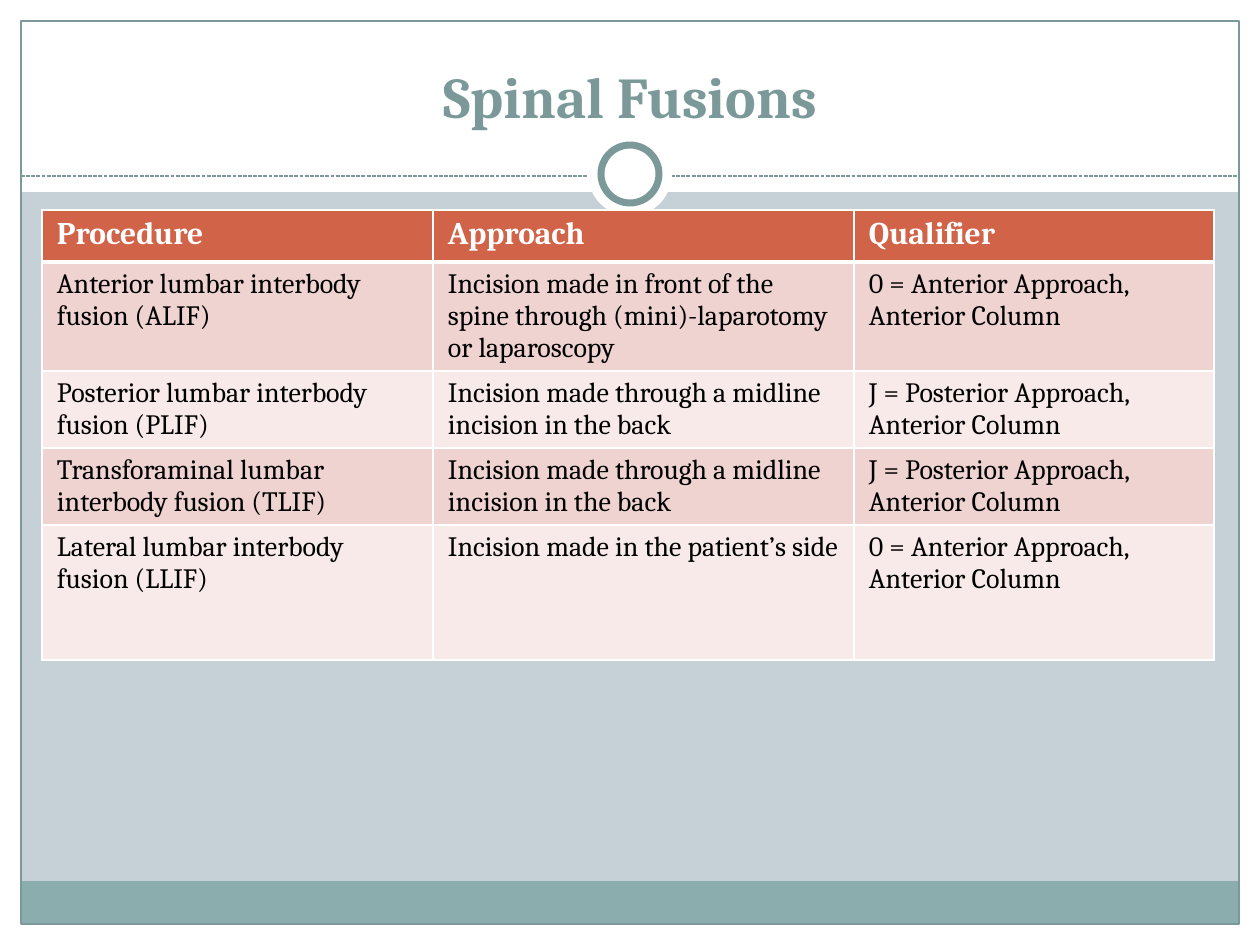
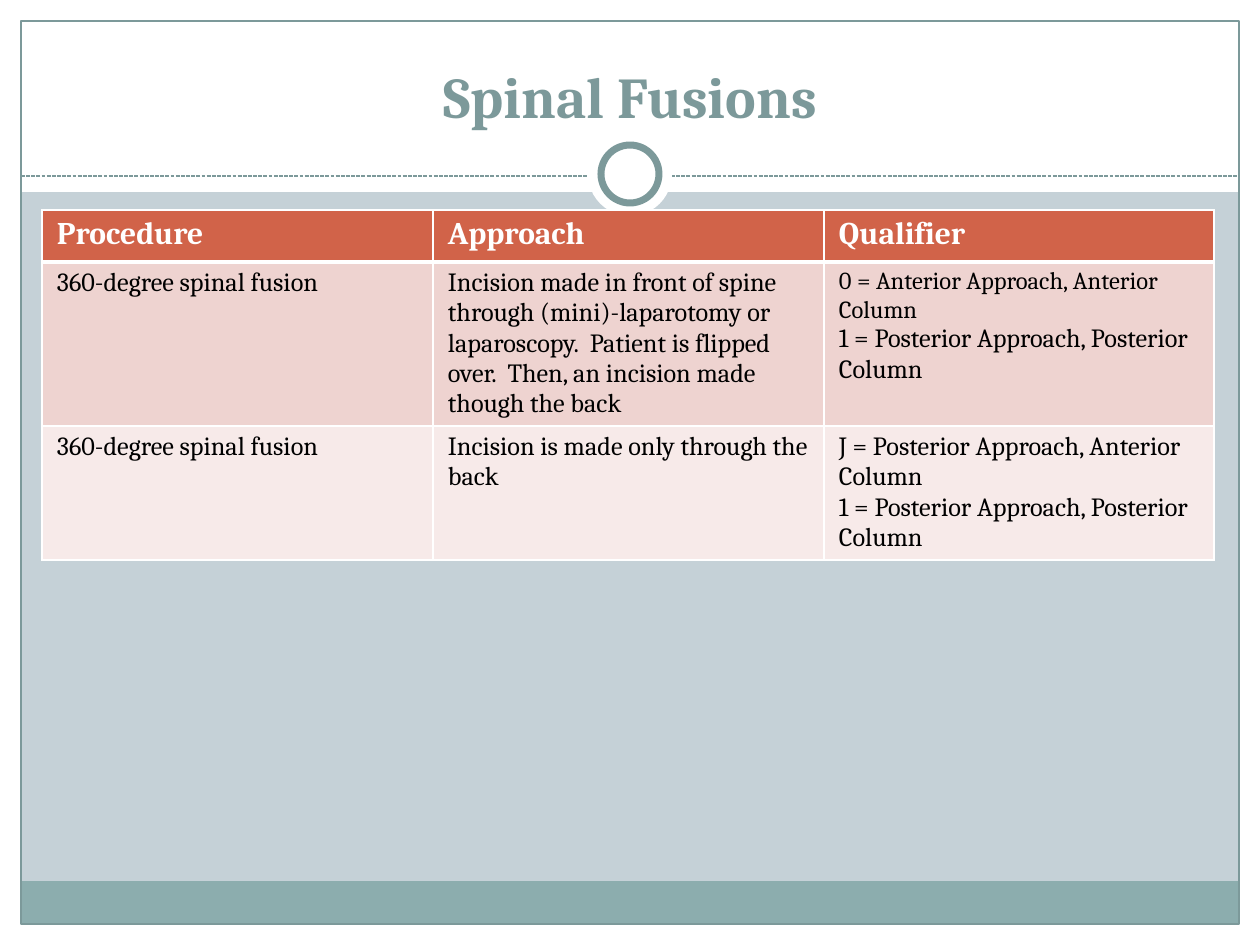
from lxml.etree import SubElement
from pptx import Presentation
from pptx.dml.color import RGBColor
from pptx.enum.dml import MSO_LINE
from pptx.enum.shapes import MSO_CONNECTOR, MSO_SHAPE
from pptx.enum.text import MSO_ANCHOR, MSO_AUTO_SIZE, PP_ALIGN
from pptx.oxml.ns import qn
from pptx.util import Pt

EMU_PER_PX = 914400 / 126
SLIDE_WIDTH, SLIDE_HEIGHT = 1260, 945
MARGIN = 21
TOP_BAND_HEIGHT = 192
TITLE_BOX = (42, 32, 1176, 104)
TABLE_ORIGIN = (42, 210)
FONT = "Cambria"
COLORS = {
    "background": "C5D1D7",
    "white": "FFFFFF",
    "black": "000000",
    "teal": "7C999A",
    "footer": "8CADAE",
    "header": "D16349",
    "odd_row": "EED3D0",
    "even_row": "F7EAE9",
}

HEADINGS = ("Procedure", "Approach", "Qualifier")
ANTERIOR = "0 = Anterior Approach, Anterior Column"
POSTERIOR = "J = Posterior Approach, Anterior Column"
POSTERIOR_COLUMN = "1 = Posterior Approach, Posterior Column"
MIDLINE = "Incision made through a midline incision in the back"
INTERBODY_FUSIONS = [
    ("Anterior lumbar interbody fusion (ALIF)",
     "Incision made in front of the spine through (mini)-laparotomy or laparoscopy",
     ANTERIOR),
    ("Posterior lumbar interbody fusion (PLIF)", MIDLINE, POSTERIOR),
    ("Transforaminal lumbar interbody fusion (TLIF)", MIDLINE, POSTERIOR),
    ("Lateral lumbar interbody fusion (LLIF)",
     "Incision made in the patient’s side", ANTERIOR),
]
FULL_CIRCLE_FUSIONS = [
    ("360-degree spinal fusion",
     "Incision made in front of spine through (mini)-laparotomy or laparoscopy.  "
     "Patient is flipped over.  Then, an incision made though the back",
     f"{ANTERIOR}\n{POSTERIOR_COLUMN}"),
    ("360-degree spinal fusion", "Incision is made only through the back",
     f"{POSTERIOR}\n{POSTERIOR_COLUMN}"),
]


def px(length):
    return round(length * EMU_PER_PX)


def color(name):
    return RGBColor.from_string(COLORS[name])


def write_text(text_frame, text, size, color_name, bold=False, align=PP_ALIGN.LEFT):
    """Write one paragraph per line of text."""
    text_frame.text = text
    text_frame.word_wrap = True
    for paragraph in text_frame.paragraphs:
        paragraph.alignment = align
        font = paragraph.runs[0].font
        font.name, font.size, font.bold = FONT, Pt(size), bold
        font.color.rgb = color(color_name)


def add_plain_shape(slide, kind, box, fill=None, line=None, line_width=0.75):
    shape = slide.shapes.add_shape(kind, *map(px, box))
    shape.shadow.inherit = False
    if fill:
        shape.fill.solid()
        shape.fill.fore_color.rgb = color(fill)
    else:
        shape.fill.background()
    if line:
        shape.line.color.rgb = color(line)
        shape.line.width = Pt(line_width)
    else:
        shape.line.fill.background()
    return shape


def add_dashed_rule(slide, left, right, y):
    rule = slide.shapes.add_connector(
        MSO_CONNECTOR.STRAIGHT, px(left), px(y), px(right), px(y))
    rule.line.color.rgb = color("teal")
    rule.line.width = Pt(0.75)
    rule.line.dash_style = MSO_LINE.SQUARE_DOT
    SubElement(rule._element.spPr, qn("a:effectLst"))
    return rule


def add_ring(slide, center_x, center_y):
    parts = []
    for diameter, outline in ((84, None), (58, "teal")):
        box = (center_x - diameter // 2, center_y - diameter // 2, diameter, diameter)
        parts.append(add_plain_shape(slide, MSO_SHAPE.OVAL, box, "white", outline, 4))
    return parts


def add_frame(slide):
    """Draw the bands, border, rule and ring, and return them back to front."""
    right, bottom = SLIDE_WIDTH - MARGIN, SLIDE_HEIGHT - MARGIN
    inner_width = right - MARGIN
    footer_height = 43
    bands = [
        ((0, bottom, SLIDE_WIDTH, MARGIN), "white"),
        ((0, 0, SLIDE_WIDTH, TOP_BAND_HEIGHT), "white"),
        ((0, 0, MARGIN, SLIDE_HEIGHT), "white"),
        ((right, 0, MARGIN, SLIDE_HEIGHT), "white"),
        ((MARGIN, bottom - footer_height, inner_width, footer_height), "footer"),
    ]
    parts = [add_plain_shape(slide, MSO_SHAPE.RECTANGLE, box, fill) for box, fill in bands]
    border_box = (MARGIN, MARGIN, inner_width, bottom - MARGIN)
    parts.append(add_plain_shape(slide, MSO_SHAPE.RECTANGLE, border_box, line="teal"))
    parts.append(add_dashed_rule(slide, MARGIN, right, 176))
    return parts + add_ring(slide, SLIDE_WIDTH // 2, 174)


def share_frame(slide, layout):
    """Draw the frame once and move it to the layout, behind its title."""
    layout.background.fill.solid()
    layout.background.fill.fore_color.rgb = color("background")
    layout_tree = layout.shapes.element
    for placeholder in list(layout.placeholders):
        if placeholder.placeholder_format.idx != 0:
            layout_tree.remove(placeholder._element)
    for position, part in enumerate(add_frame(slide), start=2):
        layout_tree.insert(position, part._element)


def set_title(slide, text):
    title = slide.shapes.title
    title.left, title.top, title.width, title.height = map(px, TITLE_BOX)
    write_text(title.text_frame, text, size=33, color_name="teal", bold=True,
               align=PP_ALIGN.CENTER)
    title.text_frame.vertical_anchor = MSO_ANCHOR.BOTTOM
    title.text_frame.auto_size = MSO_AUTO_SIZE.NONE


def set_borders(cell, top, bottom):
    """Give the cell white borders, with top and bottom widths in points."""
    properties = cell._tc.get_or_add_tcPr()
    for side, width in (("L", 1), ("R", 1), ("T", top), ("B", bottom)):
        line = SubElement(properties, qn(f"a:ln{side}"), w=str(Pt(width)))
        fill = SubElement(line, qn("a:solidFill"))
        SubElement(fill, qn("a:srgbClr"), val=COLORS["white"])


def add_fusion_table(slide, origin, column_widths, row_heights, records, body_size):
    rows = [HEADINGS, *records]
    table = slide.shapes.add_table(
        len(rows), len(HEADINGS), *map(px, origin),
        px(sum(column_widths)), px(sum(row_heights))).table
    for column, width in zip(table.columns, column_widths):
        column.width = px(width)
    for row_index, (row, height) in enumerate(zip(rows, row_heights)):
        table.rows[row_index].height = px(height)
        is_header = row_index == 0
        fill = "header" if is_header else "odd_row" if row_index % 2 else "even_row"
        for column_index, text in enumerate(row):
            cell = table.cell(row_index, column_index)
            set_borders(cell, top=3 if row_index == 1 else 1, bottom=3 if is_header else 1)
            cell.fill.solid()
            cell.fill.fore_color.rgb = color(fill)
            cell.margin_left = cell.margin_right = px(15)
            cell.margin_top = cell.margin_bottom = px(6)
            write_text(cell.text_frame, text, bold=is_header,
                       size=18 if is_header else body_size,
                       color_name="white" if is_header else "black")
    return table


def main():
    presentation = Presentation()
    presentation.slide_width = px(SLIDE_WIDTH)
    presentation.slide_height = px(SLIDE_HEIGHT)
    layout = presentation.slide_layouts.get_by_name("Title Only")
    interbody_slide, full_circle_slide = (
        presentation.slides.add_slide(layout) for _ in range(2))
    share_frame(interbody_slide, layout)
    for slide in presentation.slides:
        set_title(slide, "Spinal Fusions")

    add_fusion_table(interbody_slide, TABLE_ORIGIN, (391, 421, 360),
                     (52, 109, 77, 77, 135), INTERBODY_FUSIONS, body_size=16)
    full_circle_table = add_fusion_table(
        full_circle_slide, TABLE_ORIGIN, (391, 391, 390), (52, 164, 134),
        FULL_CIRCLE_FUSIONS, body_size=15)
    anterior_line = full_circle_table.cell(1, 2).text_frame.paragraphs[0]
    anterior_line.runs[0].font.size = Pt(14)

    presentation.save("out.pptx")


if __name__ == "__main__":
    main()
